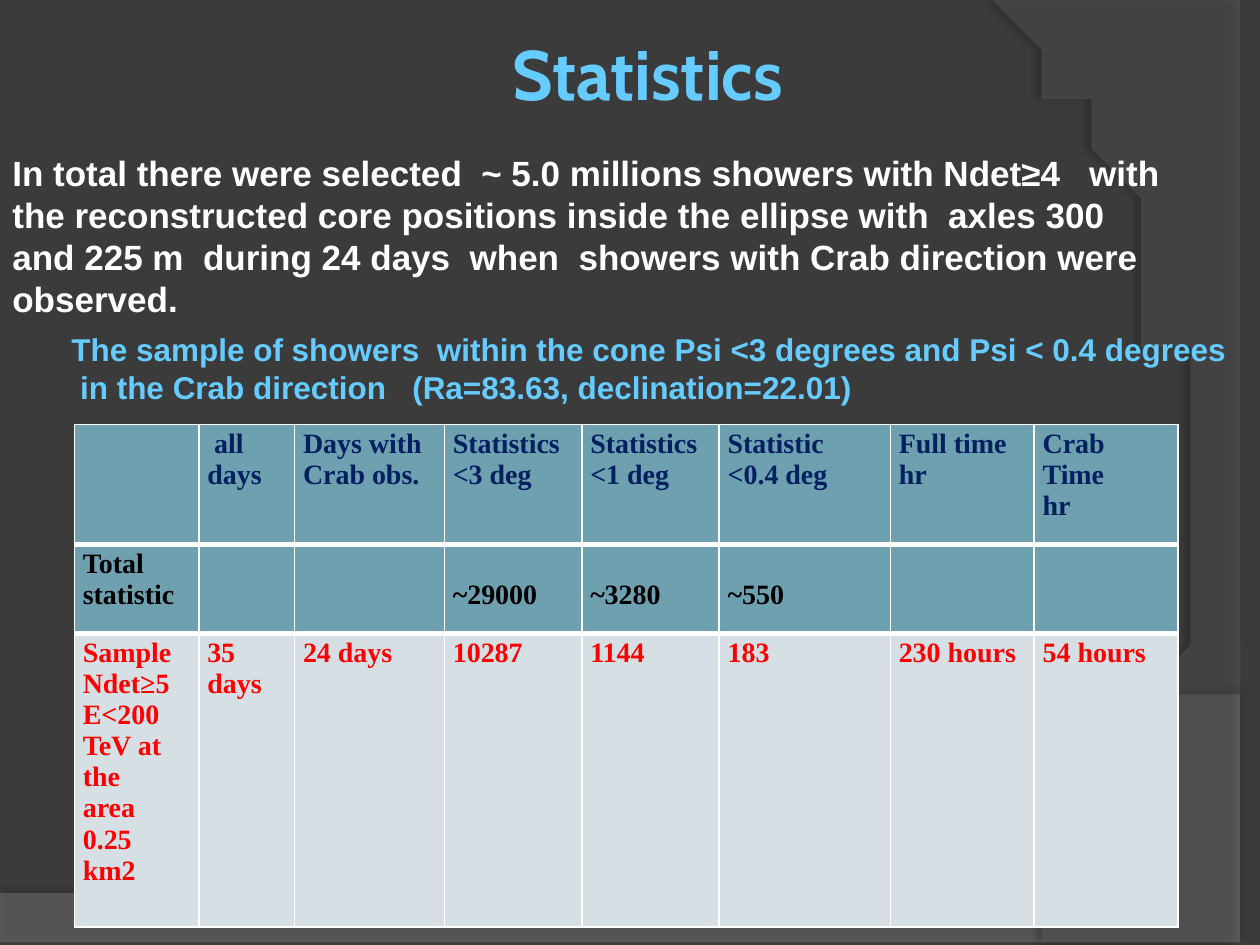
"""Build the shower statistics slide with its swoosh background and data table."""
from dataclasses import dataclass

from lxml import etree
from pptx import Presentation
from pptx import util as u
from pptx.dml import color
from pptx.enum import text
from pptx.oxml import ns


@dataclass(frozen=True)
class Theme:
    background: str = "3B3B3B"
    floor: str = "7F7F7F"
    arc: str = "5E5E5E"
    accent: str = "66CCFF"
    white: str = "FFFFFF"
    black: str = "000000"
    navy: str = "002060"
    red: str = "FF0000"
    teal: str = "6EA0B0"
    pale: str = "D5DFE4"
    title_size: int = 40
    body_size: int = 20
    sample_size: int = 18
    cell_size: int = 16


def write(frame, content, font, size, tint):
    frame.text = content
    for paragraph in frame.paragraphs:
        paragraph.font.name = font
        paragraph.font.size = u.Pt(size)
        paragraph.font.bold = True
        paragraph.font.color.rgb = color.RGBColor.from_string(tint)


def add_node(parent, tag, **attributes):
    return etree.SubElement(parent, ns.qn(tag), {k: str(v) for k, v in attributes.items()})


theme = Theme()
deck = Presentation()
deck.slide_width, deck.slide_height = u.Cm(25.4), u.Cm(19.05)
slide = deck.slides.add_slide(deck.slide_layouts[6])
slide.background.fill.solid()
slide.background.fill.fore_color.rgb = color.RGBColor.from_string(theme.background)

swooshes = [
    ([(0, 17.91), (0, 19.05), (25.4, 19.05), (25.4, 13.21)],
     [(14.2, 18.52), (9.93, 18.26), (0, 17.91)], theme.floor, 45, 35, 3.5, 270),
    ([(25.4, 0.05), (25.4, 19.05), (20.85, 19.05)],
     [(23.75, 15.72), (25.86, 7.62), (20.32, 0)], theme.arc, 40, 45, 4, 180),
]
for corners, bend, tint, opacity, shade, distance, angle in swooshes:
    controls = [corners[-1], *bend]
    curve = []
    for step in range(1, 41):
        t = step / 40
        weights = ((1 - t) ** 3, 3 * t * (1 - t) ** 2, 3 * t * t * (1 - t), t ** 3)
        curve.append(tuple(sum(w * c[axis] for w, c in zip(weights, controls)) for axis in (0, 1)))
    builder = slide.shapes.build_freeform(*corners[0], scale=float(u.Cm(1)))
    builder.add_line_segments(corners[1:] + curve, close=True)
    swoosh = builder.convert_to_shape()
    swoosh.line.fill.background()
    swoosh.fill.solid()
    swoosh.fill.fore_color.rgb = color.RGBColor.from_string(tint)
    swoosh.shadow.inherit = False
    properties = swoosh.element.spPr
    add_node(properties.find(".//" + ns.qn("a:solidFill"))[0], "a:alpha", val=opacity * 1000)
    shadow = add_node(properties.find(ns.qn("a:effectLst")), "a:outerShdw", blurRad=u.Pt(4),
                      dist=u.Pt(distance), dir=angle * 60000, algn="ctr", rotWithShape=0)
    add_node(add_node(shadow, "a:srgbClr", val=theme.black), "a:alpha", val=shade * 1000)

captions = [
    ("Statistics", (0.71, 0, 24.69, 2.92), "Cabin", theme.title_size, theme.accent, True),
    ("In total there were selected  ~ 5.0 millions showers with Ndet≥4   with the reconstructed "
     "core positions inside the ellipse with  axles 300 and 225 m  during 24 days  when  showers "
     "with Crab direction were observed.",
     (0, 2.92, 23.7, 3.68), "Arial", theme.body_size, theme.white, True),
    ("The sample of showers  within the cone Psi <3 degrees and Psi < 0.4 degrees\n"
     " in the Crab direction   (Ra=83.63, declination=22.01)",
     (1.19, 6.53, 24.21, 1.8), "Arial", theme.sample_size, theme.accent, False),
]
for content, place, font, size, tint, wraps in captions:
    caption = slide.shapes.add_textbox(*map(u.Cm, place)).text_frame
    caption.word_wrap = wraps
    write(caption, content, font, size, tint)
    if size == theme.title_size:
        caption.vertical_anchor = text.MSO_ANCHOR.MIDDLE
        caption.paragraphs[0].alignment = text.PP_ALIGN.CENTER

widths = [2.51, 1.93, 3.02, 2.77, 2.77, 3.45, 2.9, 2.9]
rows = [
    (2.41, theme.teal, theme.navy, 1, 3,
     ["", " all\ndays", "Days with Crab obs.", "Statistics\n<3 deg", "Statistics\n<1 deg",
      "Statistic\n<0.4 deg", "Full time\nhr", "Crab Time\nhr"]),
    (1.8, theme.teal, theme.black, 3, 3,
     ["Total\nstatistic", "", "", "~29000", "~3280", "~550", "", ""]),
    (5.92, theme.pale, theme.red, 3, 1,
     ["Sample\nNdet≥5\nE<200 TeV at the\narea 0.25 km2", "35 days", "24 days", "10287", "1144",
      "183", "230 hours", "54 hours"]),
]
statistics = slide.shapes.add_table(
    len(rows), len(widths), u.Cm(1.5), u.Cm(8.56),
    u.Cm(sum(widths)), u.Cm(sum(row[0] for row in rows))).table
statistics.first_row = statistics.horz_banding = False
for column, width in zip(statistics.columns, widths):
    column.width = u.Cm(width)
for r, (height, fill, tint, top, bottom, entries) in enumerate(rows):
    statistics.rows[r].height = u.Cm(height)
    for c, entry in enumerate(entries):
        cell = statistics.cell(r, c)
        cell.margin_left = cell.margin_right = u.Cm(0.17)
        cell.margin_top = cell.margin_bottom = u.Cm(0.08)
        write(cell.text_frame, entry, "Times New Roman", theme.cell_size, tint)
        if entry.startswith("~"):
            cell.vertical_anchor = text.MSO_ANCHOR.BOTTOM
            cell.margin_bottom = u.Cm(0.47)
        for side, weight in zip("LRTB", (1, 1, top, bottom)):
            border = add_node(cell._tc.get_or_add_tcPr(), "a:ln" + side, w=u.Pt(weight))
            add_node(add_node(border, "a:solidFill"), "a:srgbClr", val=theme.white)
        cell.fill.solid()
        cell.fill.fore_color.rgb = color.RGBColor.from_string(fill)

deck.save("out.pptx")
